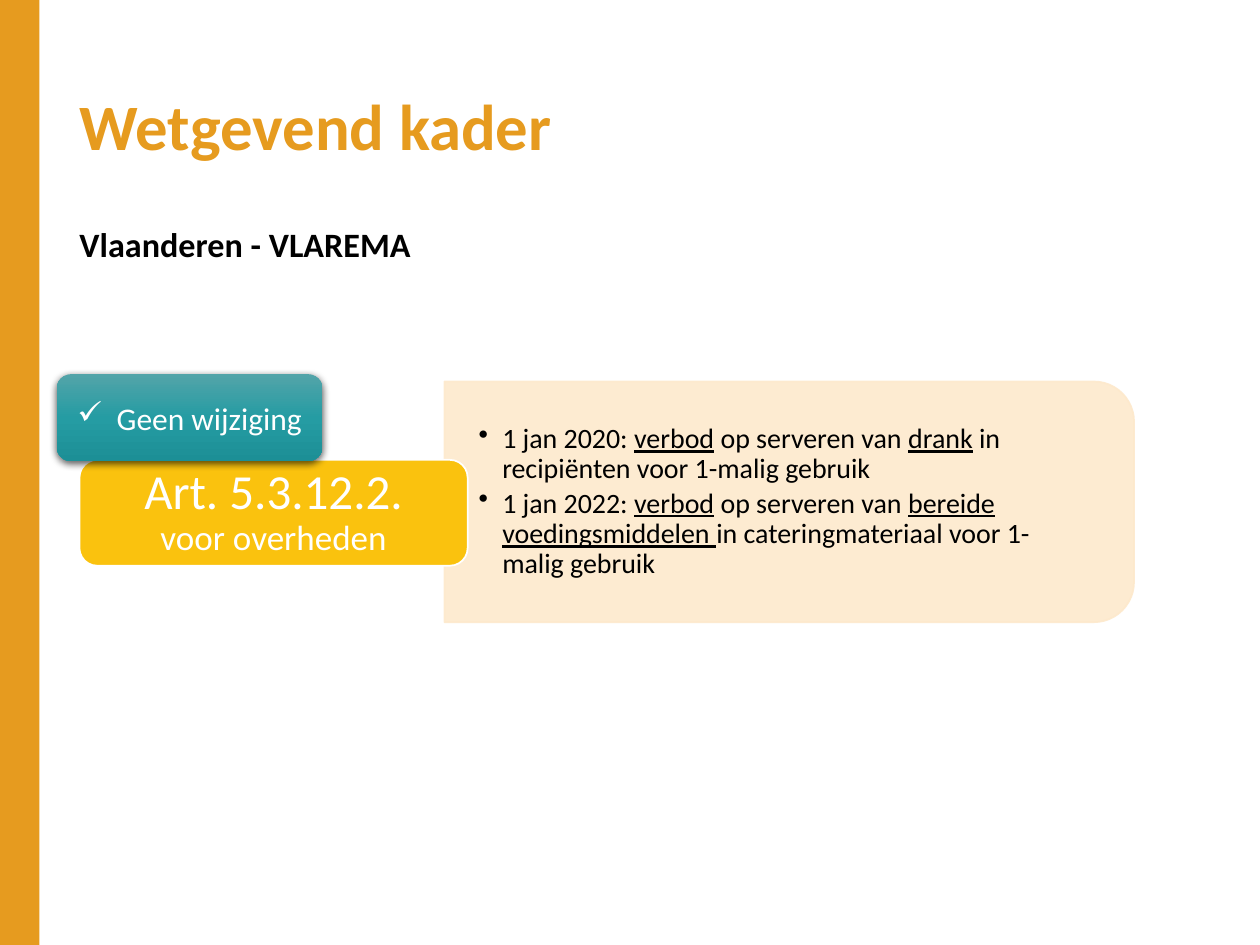
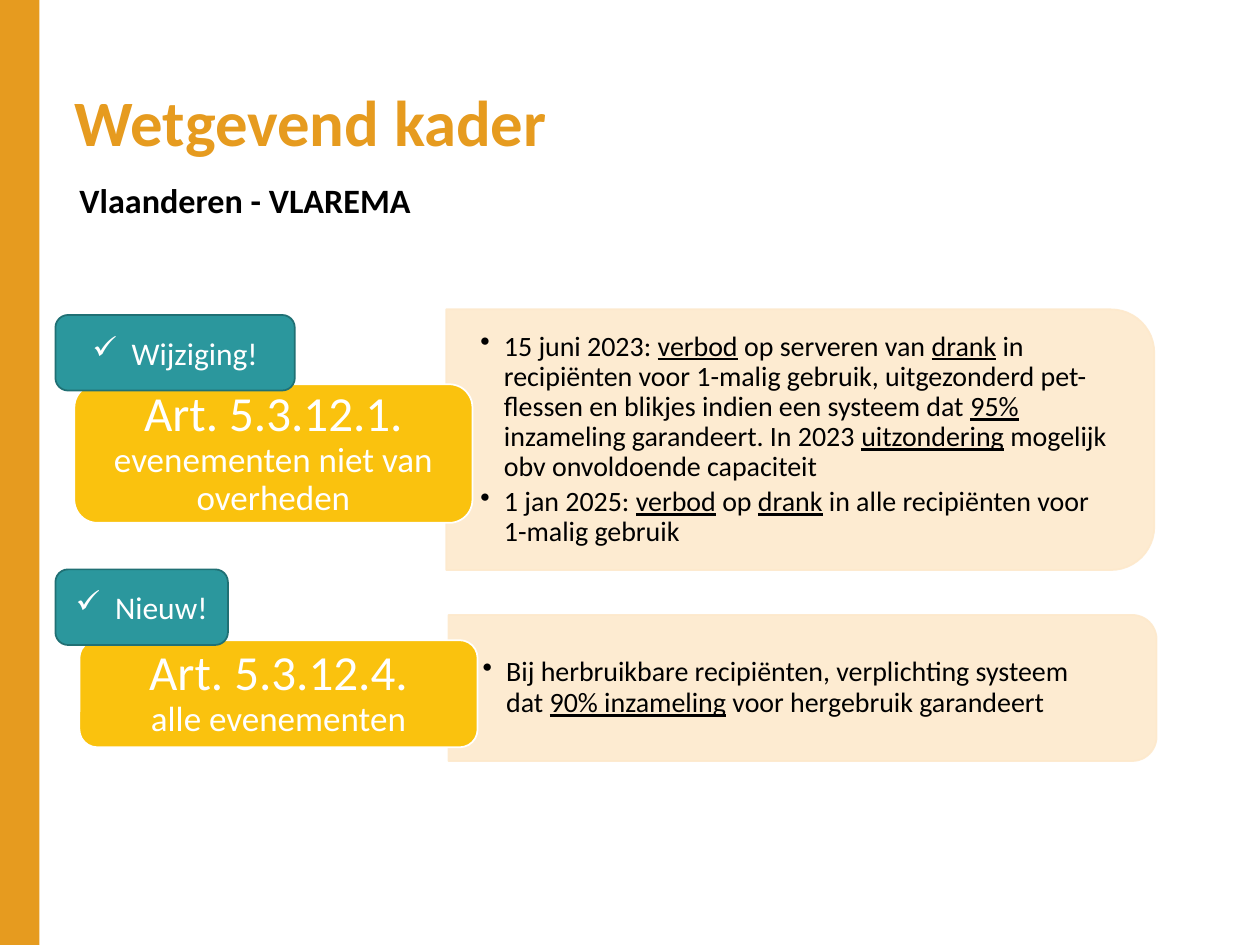
from dataclasses import dataclass

from lxml import etree
from pptx import Presentation
from pptx.dml import color
from pptx.enum import shapes, text
from pptx.oxml import ns
from pptx.util import Pt

COLORS = {
    "accent": "E69B1F",
    "panel": "FDE9CC",
    "article": "FAC20E",
    "tag": "2B979D",
    "tag_edge": "207074",
    "glow_top": "53A4A9",
    "glow_middle": "259CA3",
    "glow_bottom": "1C8F96",
    "white": "FFFFFF",
    "black": "000000",
}
FONT = "Calibri"
WIDTH, HEIGHT = 720, 540
BAND_WIDTH = 22.5
PANEL_TEXT_MARGIN = 7
BULLET_INDENT = 13.5
CHECK_INDENT = 22.5


@dataclass(frozen=True)
class Box:
    left: float
    top: float
    width: float
    height: float

    def lengths(self):
        return Pt(self.left), Pt(self.top), Pt(self.width), Pt(self.height)


@dataclass(frozen=True)
class Clause:
    article: str
    audience: str
    rules: tuple[str, ...]
    status: str
    panel_box: Box
    article_box: Box
    status_box: Box
    raised: bool = False


@dataclass(frozen=True)
class Page:
    title_box: Box
    region_box: Box
    clauses: tuple[Clause, ...]


PAGES = (
    Page(
        Box(45.4, 34.6, 652.3, 78.5),
        Box(45.4, 130.3, 629.3, 29.5),
        (
            Clause(
                "Art. 5.3.12.2.",
                "voor overheden",
                (
                    "1 jan 2020: _verbod_ op serveren van _drank_ in recipiënten voor 1-malig gebruik",
                    "1 jan 2022: _verbod_ op serveren van _bereide voedingsmiddelen _"
                    "in cateringmateriaal voor 1-malig gebruik",
                ),
                "Geen wijziging",
                Box(254, 218, 394, 137.5),
                Box(45.4, 262.8, 221.8, 60.5),
                Box(32.4, 213.8, 151.9, 49.7),
                raised=True,
            ),
        ),
    ),
    Page(
        Box(42.5, 38.2, 295.2, 67),
        Box(45.4, 105.1, 232.6, 30.2),
        (
            Clause(
                "Art. 5.3.12.1.",
                "evenementen niet van overheden",
                (
                    "15 juni 2023: _verbod_ op serveren van _drank_ in recipiënten voor 1-malig gebruik, "
                    "uitgezonderd pet-flessen en blikjes indien een systeem dat _95%_ inzameling garandeert. "
                    "In 2023 _uitzondering_ mogelijk obv onvoldoende capaciteit",
                    "1 jan 2025: _verbod_ op _drank_ in alle recipiënten voor 1-malig gebruik",
                ),
                "Wijziging!",
                Box(255, 176.8, 404.6, 149),
                Box(42.5, 219.6, 227.5, 79.2),
                Box(31.7, 180, 136.8, 43.2),
            ),
            Clause(
                "Art. 5.3.12.4.",
                "alle evenementen",
                (
                    "Bij herbruikbare recipiënten, verplichting systeem dat "
                    "_90% inzameling_ voor hergebruik garandeert",
                ),
                "Nieuw!",
                Box(256.3, 351.4, 404.6, 83.5),
                Box(45.4, 365.8, 227.5, 61.2),
                Box(31.7, 325.4, 98.6, 43.2),
            ),
        ),
    ),
)


def rgb(name: str):
    return color.RGBColor.from_string(COLORS[name])


def child(parent, tag: str, **attributes):
    return etree.SubElement(parent, ns.qn(tag), attributes)


def style_run(run, size: float, color_name: str, bold: bool = False) -> None:
    run.font.name = FONT
    run.font.size = Pt(size)
    run.font.bold = bold
    run.font.color.rgb = rgb(color_name)


def set_bullet(paragraph, mark: str, indent: float) -> None:
    properties = paragraph._p.get_or_add_pPr()
    properties.set("marL", str(Pt(indent)))
    properties.set("indent", str(-Pt(indent)))
    if mark:
        child(properties, "a:buChar", char=mark)
    else:
        child(properties, "a:buNone")


def set_frame(frame, horizontal: float, vertical: float, anchor=text.MSO_ANCHOR.MIDDLE) -> None:
    frame.word_wrap = True
    frame.auto_size = text.MSO_AUTO_SIZE.NONE
    frame.vertical_anchor = anchor
    frame.margin_left = frame.margin_right = Pt(horizontal)
    frame.margin_top = frame.margin_bottom = Pt(vertical)


def add_block(slide, kind, box: Box, fill: str, edge: str = ""):
    block = slide.shapes.add_shape(kind, *box.lengths())
    block.shadow.inherit = False
    block.fill.solid()
    block.fill.fore_color.rgb = rgb(fill)
    if edge:
        block.line.color.rgb = rgb(edge)
        block.line.width = Pt(1)
    else:
        block.line.fill.background()
    return block


def fill_heading(placeholder, box: Box, words: str, size: float, color_name: str, anchor) -> None:
    placeholder.left, placeholder.top, placeholder.width, placeholder.height = box.lengths()
    frame = placeholder.text_frame
    set_frame(frame, 0, 0, anchor)
    frame.text = words
    heading = frame.paragraphs[0]
    set_bullet(heading, "", 0)
    heading.alignment = text.PP_ALIGN.LEFT
    heading.line_spacing = 0.9
    heading.space_before = Pt(0)
    style_run(heading.runs[0], size, color_name, bold=True)


def add_panel(slide, box: Box) -> None:
    upright = Box(
        box.left + (box.width - box.height) / 2,
        box.top + (box.height - box.width) / 2,
        box.height,
        box.width,
    )
    panel = add_block(slide, shapes.MSO_SHAPE.ROUND_2_SAME_RECTANGLE, upright, "panel", "panel")
    panel.rotation = 90
    for tint in panel.element.spPr.iter(ns.qn("a:srgbClr")):
        child(tint, "a:alpha", val="90000")


def add_rules(slide, box: Box, rules: tuple[str, ...]) -> None:
    area = Box(box.left, box.top, box.width - PANEL_TEXT_MARGIN, box.height)
    frame = slide.shapes.add_textbox(*area.lengths()).text_frame
    set_frame(frame, 19.5, 10)
    for index, rule in enumerate(rules):
        paragraph = frame.add_paragraph() if index else frame.paragraphs[0]
        set_bullet(paragraph, "•", BULLET_INDENT)
        paragraph.line_spacing = 0.9
        paragraph.space_after = Pt(2.4)
        for position, words in enumerate(rule.split("_")):
            if words:
                run = paragraph.add_run()
                run.text = words
                style_run(run, 16, "black")
                run.font.underline = position % 2 == 1


def add_article(slide, clause: Clause) -> None:
    label = add_block(
        slide, shapes.MSO_SHAPE.ROUNDED_RECTANGLE, clause.article_box, "article", "white"
    )
    frame = label.text_frame
    set_frame(frame, 8.6, 4.3)
    frame.text = f"{clause.article}\v{clause.audience}"
    paragraph = frame.paragraphs[0]
    paragraph.alignment = text.PP_ALIGN.CENTER
    paragraph.line_spacing = 0.9
    for run, size in zip(paragraph.runs, (28, 20)):
        style_run(run, size, "white")


def raise_tag(tag) -> None:
    properties = tag.element.spPr
    solid = properties.find(ns.qn("a:solidFill"))
    gradient = etree.Element(ns.qn("a:gradFill"), rotWithShape="1")
    stops = child(gradient, "a:gsLst")
    for position, name in ((0, "glow_top"), (50, "glow_middle"), (100, "glow_bottom")):
        stop = child(stops, "a:gs", pos=str(position * 1000))
        child(stop, "a:srgbClr", val=COLORS[name])
    child(gradient, "a:lin", ang="5400000", scaled="0")
    properties.replace(solid, gradient)
    shadow = child(
        properties.find(ns.qn("a:effectLst")),
        "a:outerShdw",
        blurRad=str(Pt(4.5)),
        dist=str(Pt(1.5)),
        dir="5400000",
        rotWithShape="0",
    )
    child(child(shadow, "a:srgbClr", val=COLORS["black"]), "a:alpha", val="63000")


def add_status(slide, clause: Clause) -> None:
    edge = "" if clause.raised else "tag_edge"
    tag = add_block(slide, shapes.MSO_SHAPE.ROUNDED_RECTANGLE, clause.status_box, "tag", edge)
    if clause.raised:
        raise_tag(tag)
    frame = tag.text_frame
    set_frame(frame, 7.2, 3.6)
    frame.text = clause.status
    paragraph = frame.paragraphs[0]
    set_bullet(paragraph, "✓", CHECK_INDENT)
    paragraph.alignment = text.PP_ALIGN.CENTER
    style_run(paragraph.runs[0], 18, "white")


def add_page(deck, layout, page: Page):
    slide = deck.slides.add_slide(layout)
    title, region = slide.placeholders
    fill_heading(title, page.title_box, "Wetgevend kader", 37, "accent", text.MSO_ANCHOR.MIDDLE)
    fill_heading(
        region, page.region_box, "Vlaanderen - VLAREMA", 19.5, "black", text.MSO_ANCHOR.TOP
    )
    for clause in page.clauses:
        add_panel(slide, clause.panel_box)
        add_rules(slide, clause.panel_box, clause.rules)
        add_article(slide, clause)
        add_status(slide, clause)
    return slide


def main() -> None:
    deck = Presentation()
    deck.slide_width, deck.slide_height = Pt(WIDTH), Pt(HEIGHT)
    layout = deck.slide_layouts[1]
    pages = [add_page(deck, layout, page) for page in PAGES]
    band = add_block(
        pages[0], shapes.MSO_SHAPE.RECTANGLE, Box(0, 0, BAND_WIDTH, HEIGHT), "accent"
    )
    layout.shapes.element.insert(2, band.element)
    deck.save("out.pptx")


if __name__ == "__main__":
    main()
